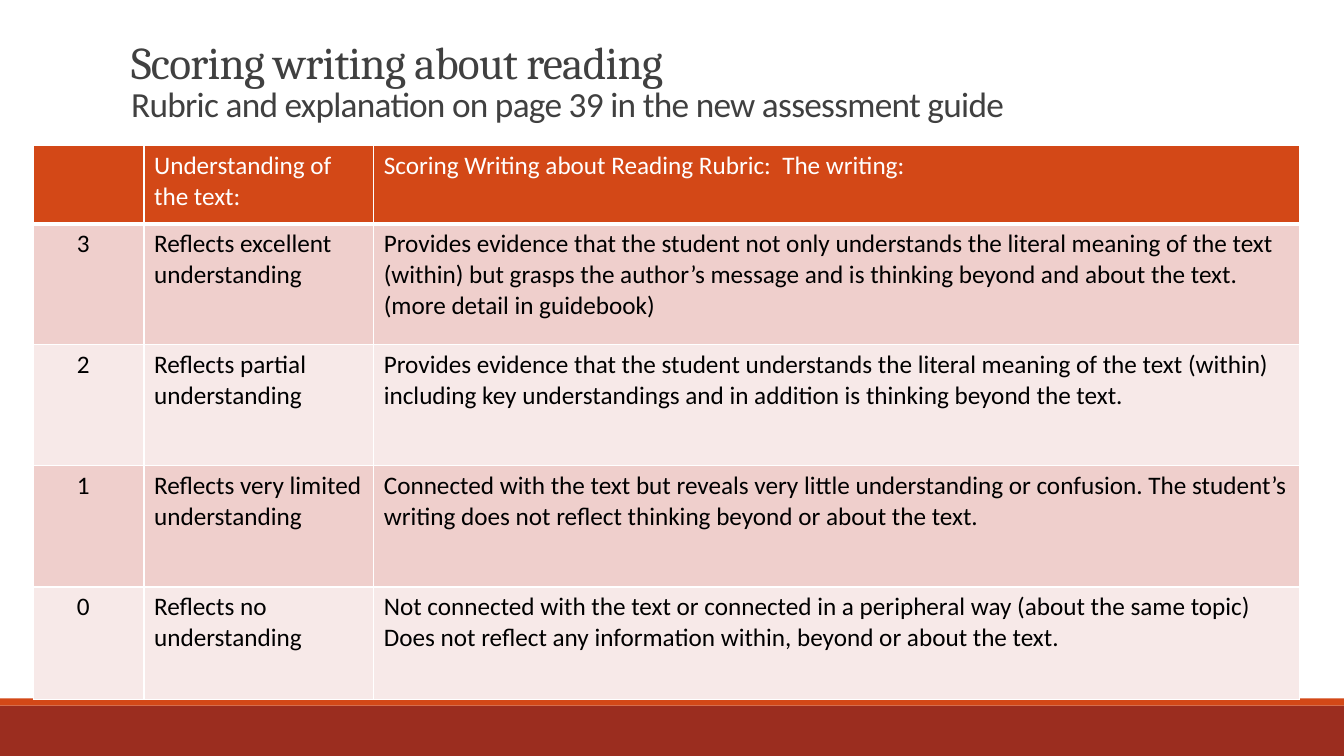
from dataclasses import dataclass

from lxml.etree import SubElement
from pptx import Presentation
from pptx.dml.color import RGBColor
from pptx.enum.shapes import MSO_SHAPE
from pptx.enum.text import MSO_ANCHOR, MSO_AUTO_SIZE, PP_ALIGN
from pptx.oxml.ns import qn
from pptx.util import Cm, Pt


@dataclass(frozen=True)
class Theme:
    """Colours, fonts and type sizes of the deck."""
    accent: str = "D34817"
    footer: str = "9B2D1F"
    bands: tuple = ("EFCFCC", "F7E9E8")
    title: str = "404040"
    text: str = "000000"
    light: str = "FFFFFF"
    heading_font: str = "Cambria"
    body_font: str = "Calibri"
    title_size: float = 32.4
    subtitle_size: float = 25.2
    table_size: float = 18


THEME = Theme()
COLUMN_WIDTHS = (2.79, 5.79, 23.32)
ROW_HEIGHTS = (1.98, 3.05, 3.05, 3.05, 2.84)
RUBRIC = (
    ("", "Understanding of the text:",
     "Scoring Writing about Reading Rubric:  The writing:"),
    ("3", "Reflects excellent understanding",
     "Provides evidence that the student not only understands the literal "
     "meaning of the text (within) but grasps the author’s message and is "
     "thinking beyond and about the text. (more detail in guidebook)"),
    ("2", "Reflects partial understanding",
     "Provides evidence that the student understands the literal meaning of "
     "the text (within) including key understandings and in addition is "
     "thinking beyond the text."),
    ("1", "Reflects very limited understanding",
     "Connected with the text but reveals very little understanding or "
     "confusion. The student’s writing does not reflect thinking beyond or "
     "about the text."),
    ("0", "Reflects no understanding",
     "Not connected with the text or connected in a peripheral way (about "
     "the same topic) Does not reflect any information within, beyond or "
     "about the text."),
)


def style_run(r, font, size, color):
    """Set the font, size and colour of a run."""
    r.font.name = font
    r.font.size = Pt(size)
    r.font.color.rgb = RGBColor.from_string(color)


def add_footer(s, left, top, width, height):
    """Draw the footer bar with a thin accent strip along its top."""
    strip = Cm(0.18)
    for y, h, color in ((top + strip, height - strip, THEME.footer),
                        (top, strip, THEME.accent)):
        sp = s.shapes.add_shape(MSO_SHAPE.RECTANGLE, left, y, width, h)
        sp.shadow.inherit = False
        sp.fill.solid()
        sp.fill.fore_color.rgb = RGBColor.from_string(color)
        sp.line.fill.background()


def add_title(s, left, top, width, height):
    """Fill the title placeholder with the heading and its second line."""
    sp = s.shapes.title
    sp.left, sp.top, sp.width, sp.height = left, top, width, height
    tf = sp.text_frame
    tf.text = ("Scoring writing about reading\v"
               "Rubric and explanation on page 39 in the new assessment guide")
    tf.word_wrap = True
    tf.auto_size = MSO_AUTO_SIZE.NONE
    tf.vertical_anchor = MSO_ANCHOR.BOTTOM
    tf.margin_bottom = Cm(1.05)
    p = tf.paragraphs[0]
    p.alignment = PP_ALIGN.LEFT
    p.line_spacing = 0.85
    styles = ((THEME.heading_font, THEME.title_size),
              (THEME.body_font, THEME.subtitle_size))
    for r, (font, size) in zip(p.runs, styles):
        style_run(r, font, size, THEME.title)
        r.font._element.set("spc", "-50")


def add_borders(cell, bottom):
    """Draw light borders round a cell, the bottom one in its own width."""
    tc_pr = cell._tc.get_or_add_tcPr()
    for side, width in (("L", 1), ("R", 1), ("T", 1), ("B", bottom)):
        ln = SubElement(tc_pr, qn(f"a:ln{side}"), w=str(Pt(width)))
        fill = SubElement(ln, qn("a:solidFill"))
        SubElement(fill, qn("a:srgbClr"), val=THEME.light)


def add_rubric(s, left, top, width, height):
    """Place the rubric table with a header row and banded score rows."""
    table = s.shapes.add_table(len(RUBRIC), len(COLUMN_WIDTHS),
                               left, top, width, height).table
    table.first_row = table.horz_banding = False
    for column, share in zip(table.columns, COLUMN_WIDTHS):
        column.width = int(width * share / sum(COLUMN_WIDTHS))
    for i, (row, share) in enumerate(zip(table.rows, ROW_HEIGHTS)):
        row.height = int(height * share / sum(ROW_HEIGHTS))
        header = i == 0
        fill = THEME.accent if header else THEME.bands[(i - 1) % 2]
        color = THEME.light if header else THEME.text
        for j, (cell, text) in enumerate(zip(row.cells, RUBRIC[i])):
            add_borders(cell, 3 if header else 1)
            cell.fill.solid()
            cell.fill.fore_color.rgb = RGBColor.from_string(fill)
            if j == 0:
                cell.margin_left = Cm(1.1)
            cell.text_frame.text = text
            for r in cell.text_frame.paragraphs[0].runs:
                style_run(r, THEME.body_font, THEME.table_size, color)


def main():
    """Build the rubric slide and save it."""
    prs = Presentation()
    prs.slide_width, prs.slide_height = Cm(33.87), Cm(19.05)
    s = prs.slides.add_slide(prs.slide_layouts[5])
    footer = Cm(1.45)
    add_footer(s, 0, prs.slide_height - footer, prs.slide_width, footer)
    add_title(s, Cm(3.05), Cm(0.79), Cm(27.94), Cm(3.4))
    add_rubric(s, Cm(0.84), Cm(3.66), Cm(31.9), Cm(13.97))
    prs.save("out.pptx")


if __name__ == "__main__":
    main()
